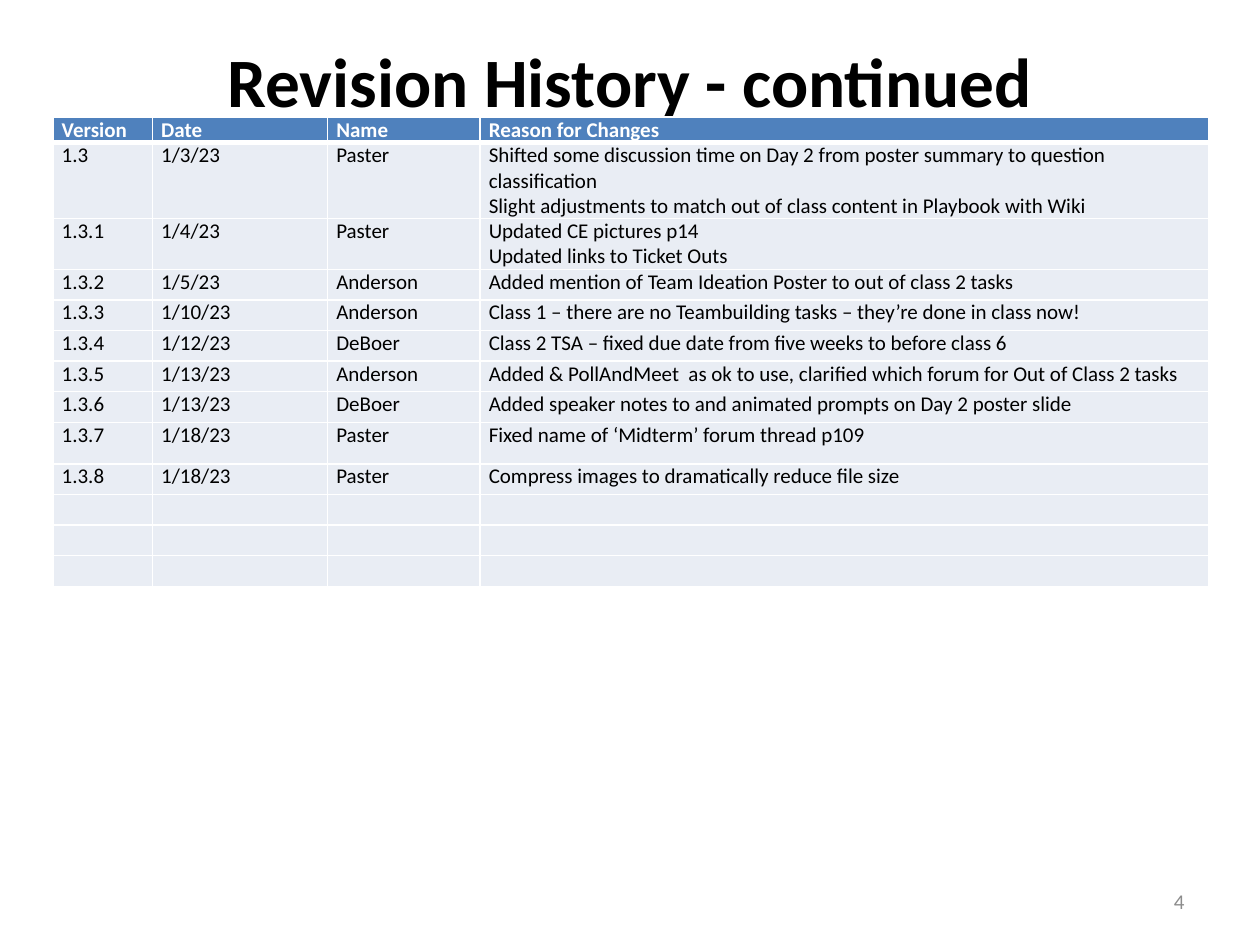
import pptx
import pptx.util
import pptx.dml.color
import pptx.enum.text
import lxml.etree

Pt = pptx.util.Pt
Inches = pptx.util.Inches
Align = pptx.enum.text.PP_ALIGN
Anchor = pptx.enum.text.MSO_ANCHOR

HUES = {"ink": "000000", "white": "FFFFFF", "head": "4F81BD", "body": "E9EDF4", "page": "8C8C8C"}
WIDTH, HEIGHT = 10, 7.5
COLS = [0.079, 0.139, 0.121, 0.578]
SMALL = 0.0324
ROWS = [0.027, 0.08, 0.054] + [SMALL] * 5 + [0.044] + [SMALL] * 4
HEADS = ["Version", "Date", "Name", "Reason for Changes"]
LOG = [
    ("1.3", "1/3/23", "Paster",
     "Shifted some discussion time on Day 2 from poster summary to question classification\n"
     "Slight adjustments to match out of class content in Playbook with Wiki"),
    ("1.3.1", "1/4/23", "Paster", "Updated CE pictures p14\nUpdated links to Ticket Outs"),
    ("1.3.2", "1/5/23", "Anderson", "Added mention of Team Ideation Poster to out of class 2 tasks"),
    ("1.3.3", "1/10/23", "Anderson",
     "Class 1 – there are no Teambuilding tasks – they’re done in class now!"),
    ("1.3.4", "1/12/23", "DeBoer", "Class 2 TSA – fixed due date from five weeks to before class 6"),
    ("1.3.5", "1/13/23", "Anderson",
     "Added & PollAndMeet  as ok to use, clarified which forum for Out of Class 2 tasks"),
    ("1.3.6", "1/13/23", "DeBoer", "Added speaker notes to and animated prompts on Day 2 poster slide"),
    ("1.3.7", "1/18/23", "Paster", "Fixed name of ‘Midterm’ forum thread p109"),
    ("1.3.8", "1/18/23", "Paster", "Compress images to dramatically reduce file size"),
]


class Deck:
    def __init__(self, face="Calibri", size=12):
        self.face, self.size = face, size
        self.show = pptx.Presentation()
        self.show.slide_width, self.show.slide_height = Inches(WIDTH), Inches(HEIGHT)
        self.slide = self.show.slides.add_slide(self.show.slide_layouts[6])

    def box(self, left, top, width, height):
        return (Inches(left * WIDTH), Inches(top * HEIGHT),
                Inches(width * WIDTH), Inches(height * HEIGHT))

    def hue(self, name):
        return pptx.dml.color.RGBColor.from_string(HUES[name])

    def style(self, frame, hue, size=None, bold=False, align=Align.LEFT):
        for para in frame.paragraphs:
            para.alignment = align
            font = para.font
            font.name, font.size, font.bold = self.face, Pt(size or self.size), bold
            font.color.rgb = self.hue(hue)

    def text(self, words, place, hue, anchor, top=0.05, **look):
        frame = self.slide.shapes.add_textbox(*self.box(*place)).text_frame
        frame.word_wrap = True
        frame.vertical_anchor = anchor
        frame.margin_top = Inches(top)
        frame.text = words
        self.style(frame, hue, **look)

    def edge(self, cell, side, width):
        props = cell._tc.get_or_add_tcPr()
        tag = pptx.oxml.ns.qn
        line = lxml.etree.SubElement(props, tag("a:ln" + side), w=str(Pt(width)))
        fill = lxml.etree.SubElement(line, tag("a:solidFill"))
        lxml.etree.SubElement(fill, tag("a:srgbClr"), val=HUES["white"])

    def cell(self, cell, words, head):
        cell.margin_left = cell.margin_right = Inches(0.07)
        cell.margin_top = cell.margin_bottom = 0
        for side in "LRTB":
            thick = head and side == "B"
            self.edge(cell, side, 3 if thick else 1)
        cell.fill.solid()
        cell.fill.fore_color.rgb = self.hue("head" if head else "body")
        cell.text = words
        self.style(cell.text_frame, "white" if head else "ink", bold=head)
        if not words:
            end = cell.text_frame.paragraphs[0]._p.get_or_add_endParaRPr()
            end.set("sz", str(self.size * 100))

    def table(self, left, top, cols, rows, data):
        place = self.box(left, top, sum(cols), sum(rows))
        grid = self.slide.shapes.add_table(len(rows), len(cols), *place).table
        for col, share in zip(grid.columns, cols):
            col.width = Inches(share * WIDTH)
        for row, share in zip(grid.rows, rows):
            row.height = Inches(share * HEIGHT)
        for r, line in enumerate(data):
            for c, words in enumerate(line):
                self.cell(grid.cell(r, c), words, r == 0)


def main():
    deck = Deck()
    deck.text("Revision History - continued", (0.05, 0.04, 0.9, 0.17), "ink", Anchor.TOP,
              top=0, size=39.6, bold=True, align=Align.CENTER)
    blank = [[""] * len(COLS)] * (len(ROWS) - len(LOG) - 1)
    deck.table(0.042, 0.124, COLS, ROWS, [HEADS, *LOG, *blank])
    deck.text("4", (0.717, 0.927, 0.233, 0.053), "page", Anchor.MIDDLE, align=Align.RIGHT)
    deck.show.save("out.pptx")


if __name__ == "__main__":
    main()
